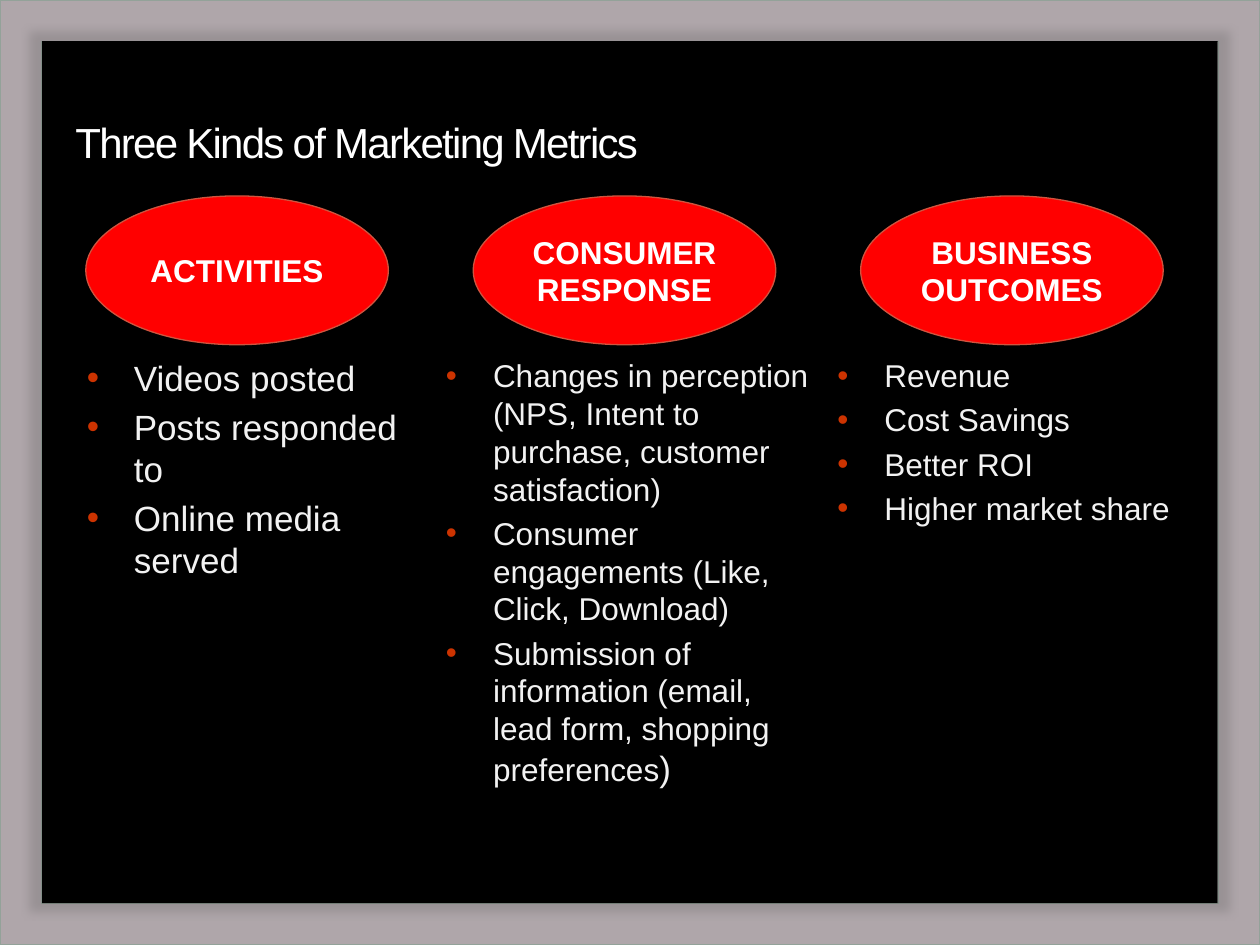
"""Build a slide that sets out three kinds of marketing metrics."""
import lxml.etree
import pptx
import pptx.dml.color
import pptx.enum.shapes
import pptx.enum.text
import pptx.oxml.ns
import pptx.util

Cm = pptx.util.Cm
Pt = pptx.util.Pt
KIND = pptx.enum.shapes.MSO_SHAPE
MID = pptx.enum.text.MSO_ANCHOR.MIDDLE
FONT = "Arial"
HUES = {
    "frame": "AFA6AA", "edge": "93A299", "panel": "000000", "glow": "595959",
    "oval": "FF0000", "rim": "CF543F", "shade": "000000",
    "head": "FFFFFF", "body": "F2F2F2", "dot": "CC3300",
}
COLUMNS = [
    ("ACTIVITIES", 1.5, 7.26, 20,
     ["Videos posted", "Posts responded to", "Online media served"]),
    ("CONSUMER RESPONSE", 8.74, 7.9, 18,
     ["Changes in perception (NPS, Intent to purchase, customer satisfaction)",
      "Consumer engagements (Like, Click, Download)",
      "Submission of information (email, lead form, shopping preferences)"]),
    ("BUSINESS OUTCOMES", 16.63, 7.5, 18,
     ["Revenue", "Cost Savings", "Better ROI", "Higher market share"]),
]


def color(name):
    """Return the named colour."""
    return pptx.dml.color.RGBColor.from_string(HUES[name])


def add_node(parent, tag, **attrs):
    """Append a DrawingML element and return it."""
    node = lxml.etree.SubElement(parent, pptx.oxml.ns.qn(tag))
    for key, value in attrs.items():
        node.set(key, str(value))
    return node


def style(font, size, hue, bold=False):
    """Set the face, size, colour and weight of a font."""
    font.name, font.size, font.bold = FONT, Pt(size), bold
    font.color.rgb = color(hue)


def add_form(slide, kind, box, fill, line=None):
    """Add a filled preset shape, outlined if a line colour is given."""
    form = slide.shapes.add_shape(kind, *map(Cm, box))
    form.shadow.inherit = False
    form.fill.solid()
    form.fill.fore_color.rgb = color(fill)
    if line:
        form.line.color.rgb = color(line)
        form.line.width = Pt(0.75)
    else:
        form.line.fill.background()
    return form


def add_shade(form, hue, alpha, blur, dist=0, angle=0, scale=100):
    """Give a shape an outer shadow."""
    effects = form.element.spPr.find(pptx.oxml.ns.qn("a:effectLst"))
    shade = add_node(effects, "a:outerShdw", blurRad=Pt(blur), dist=Pt(dist),
                     dir=angle * 60000, sx=scale * 1000, sy=scale * 1000,
                     algn="ctr", rotWithShape=0)
    tint = add_node(shade, "a:srgbClr", val=HUES[hue])
    add_node(tint, "a:alpha", val=alpha * 1000)


def add_frame(slide):
    """Add the border and the dark panel."""
    frame = add_form(slide, KIND.FRAME, (0, 0, 25.4, 19.05), "frame", "edge")
    frame.adjustments[0] = 0.044
    panel = add_form(slide, KIND.RECTANGLE, (0.85, 0.83, 23.7, 17.38), "panel")
    add_shade(panel, "glow", 25, 5, scale=102)


def add_box(slide, box):
    """Add a wrapping text box and return its text frame."""
    frame = slide.shapes.add_textbox(*map(Cm, box)).text_frame
    frame.word_wrap = True
    return frame


def add_title(slide, text):
    """Add the slide title."""
    frame = add_box(slide, (1.27, 1.49, 22.86, 2.74))
    frame.vertical_anchor = MID
    para = frame.paragraphs[0]
    para.text = text
    style(para.font, 24, "head")
    para.runs[0]._r.get_or_add_rPr().set("spc", "-100")


def add_oval(slide, left, text):
    """Add a column heading in an ellipse."""
    oval = add_form(slide, KIND.OVAL, (left, 3.95, 6.1, 3), "oval", "rim")
    add_shade(oval, "shade", 60, 3, 2, 45)
    oval.text_frame.vertical_anchor = MID
    para = oval.text_frame.paragraphs[0]
    para.text = text
    para.alignment = pptx.enum.text.PP_ALIGN.CENTER
    style(para.font, 18, "head", True)


def add_list(slide, left, width, size, items):
    """Add a bulleted list and return its text frame."""
    frame = add_box(slide, (left, 7.06, width, 11.89))
    for index, item in enumerate(items):
        para = frame.paragraphs[0] if index == 0 else frame.add_paragraph()
        para.text = item
        para.space_before = Pt(size * 0.2)
        props = para._p.get_or_add_pPr()
        props.set("marL", str(Cm(0.95)))
        props.set("indent", str(-Cm(0.95)))
        add_node(add_node(props, "a:buClr"), "a:srgbClr", val=HUES["dot"])
        add_node(props, "a:buFont", typeface=FONT)
        add_node(props, "a:buChar", char="•")
        style(para.font, size, "body")
    return frame


def enlarge_end(para, size):
    """Set the last character of a paragraph in a larger size."""
    run = para.runs[0]
    last = run.text[-1]
    run.text = run.text[:-1]
    tail = para.add_run()
    tail.text = last
    tail.font.size = Pt(size)


def main():
    """Build and save the slide."""
    deck = pptx.Presentation()
    deck.slide_width, deck.slide_height = Cm(25.4), Cm(19.05)
    slide = deck.slides.add_slide(deck.slide_layouts[6])
    add_frame(slide)
    add_title(slide, "Three Kinds of Marketing Metrics")
    lists = [add_list(slide, *column[1:]) for column in COLUMNS]
    enlarge_end(lists[1].paragraphs[-1], 20)
    for index, column in enumerate(COLUMNS):
        add_oval(slide, 1.73 + index * 7.81, column[0])
    deck.save("out.pptx")


if __name__ == "__main__":
    main()
